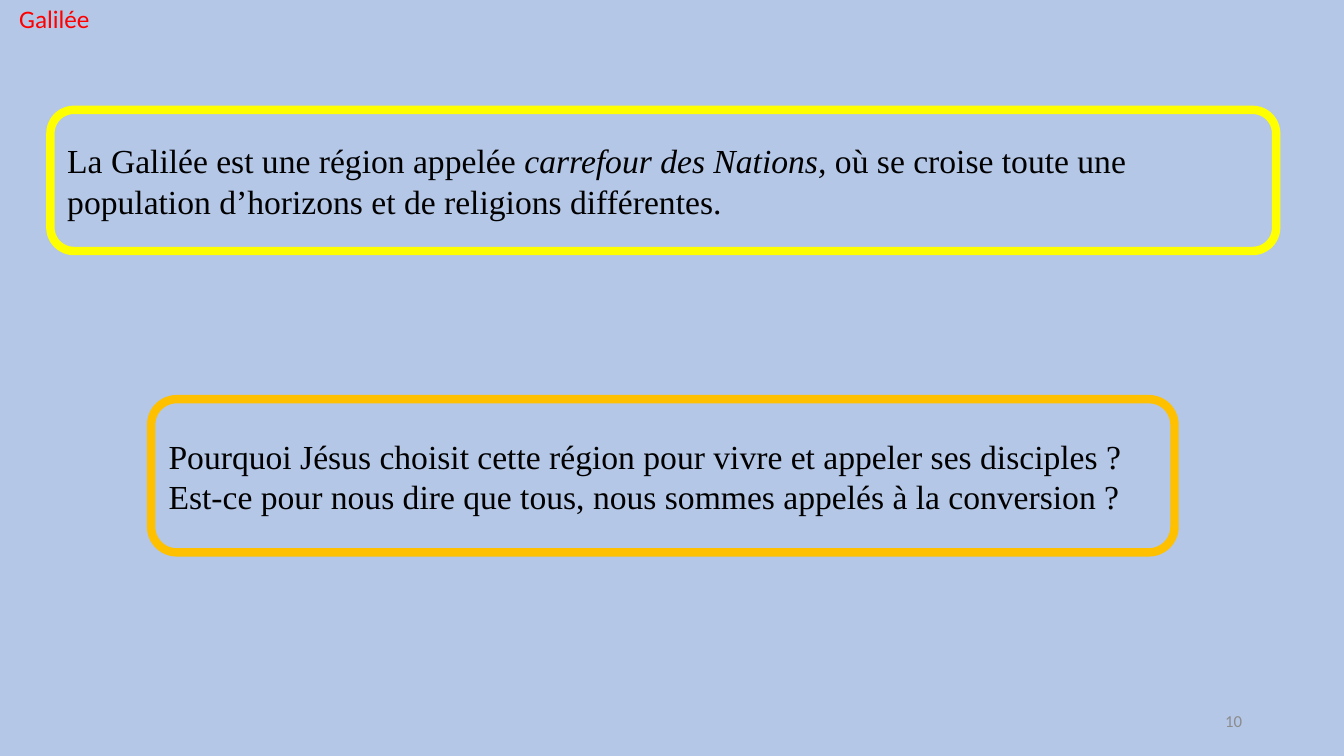
from dataclasses import dataclass

from pptx import Presentation
from pptx import util as u
from pptx.dml.color import RGBColor
from pptx.enum import shapes, text


@dataclass(frozen=True)
class Theme:
    background: str = "B4C7E7"
    statement: str = "FFFF00"
    question: str = "FFC000"
    ink: str = "000000"
    title: str = "FF0000"
    number: str = "8C8C8C"
    serif: str = "Times New Roman"
    sans: str = "Calibri"
    body_size: int = 24
    title_size: int = 18
    number_size: int = 12
    border: int = 6


THEME = Theme()
WIDTH, HEIGHT = u.Inches(13.33), u.Inches(7.5)


def area(left, top, width, height):
    shares = (left, top, width, height)
    return [int(share * side / 100) for share, side in zip(shares, (WIDTH, HEIGHT) * 2)]


def set_all(target, values):
    for name, value in values.items():
        setattr(target, name, value)


def write(sp, paragraphs, font, size, color, align=text.PP_ALIGN.LEFT,
          anchor=text.MSO_ANCHOR.MIDDLE):
    tf = sp.text_frame
    set_all(tf, {"word_wrap": True, "auto_size": text.MSO_AUTO_SIZE.NONE,
                 "vertical_anchor": anchor})
    for i, runs in enumerate(paragraphs):
        p = tf.add_paragraph() if i else tf.paragraphs[0]
        p.alignment = align
        for words, italic in runs:
            r = p.add_run()
            r.text = words
            set_all(r.font, {"name": font, "size": u.Pt(size), "italic": italic})
            r.font.color.rgb = RGBColor.from_string(color)


def add_title(s, words, box):
    sp = s.shapes.title
    set_all(sp, dict(zip(("left", "top", "width", "height"), area(*box))))
    write(sp, [[(words, False)]], THEME.sans, THEME.title_size, THEME.title,
          anchor=text.MSO_ANCHOR.TOP)


def add_frame(s, paragraphs, box, color):
    sp = s.shapes.add_shape(shapes.MSO_SHAPE.ROUNDED_RECTANGLE, *area(*box))
    sp.shadow.inherit = False
    sp.fill.background()
    sp.line.color.rgb = RGBColor.from_string(color)
    sp.line.width = u.Pt(THEME.border)
    write(sp, paragraphs, THEME.serif, THEME.body_size, THEME.ink)


def add_number(s, words, box):
    sp = s.shapes.add_textbox(*area(*box))
    write(sp, [[(words, False)]], THEME.sans, THEME.number_size, THEME.number,
          align=text.PP_ALIGN.RIGHT)


def main():
    prs = Presentation()
    set_all(prs, {"slide_width": WIDTH, "slide_height": HEIGHT})
    s = prs.slides.add_slide(prs.slide_layouts.get_by_name("Title Only"))
    s.background.fill.solid()
    s.background.fill.fore_color.rgb = RGBColor.from_string(THEME.background)

    add_title(s, "Galilée", (0.68, -0.27, 50.4, 5.33))
    add_frame(s, [[
        ("La Galilée est une région appelée ", False),
        ("carrefour des Nations,", True),
        (" où se croise toute une population d’horizons et de religions différentes.", False),
    ]], (3.75, 14.53, 91.2, 18.67), THEME.statement)
    add_frame(s, [
        [("Pourquoi Jésus choisit cette région pour vivre et appeler ses disciples ?", False)],
        [("Est-ce pour nous dire que tous, nous sommes appelés à la conversion ?", False)],
    ], (11.25, 52.8, 76.14, 20.27), THEME.question)
    add_number(s, "10", (70.67, 92.67, 22.5, 5.33))
    prs.save("out.pptx")


if __name__ == "__main__":
    main()
